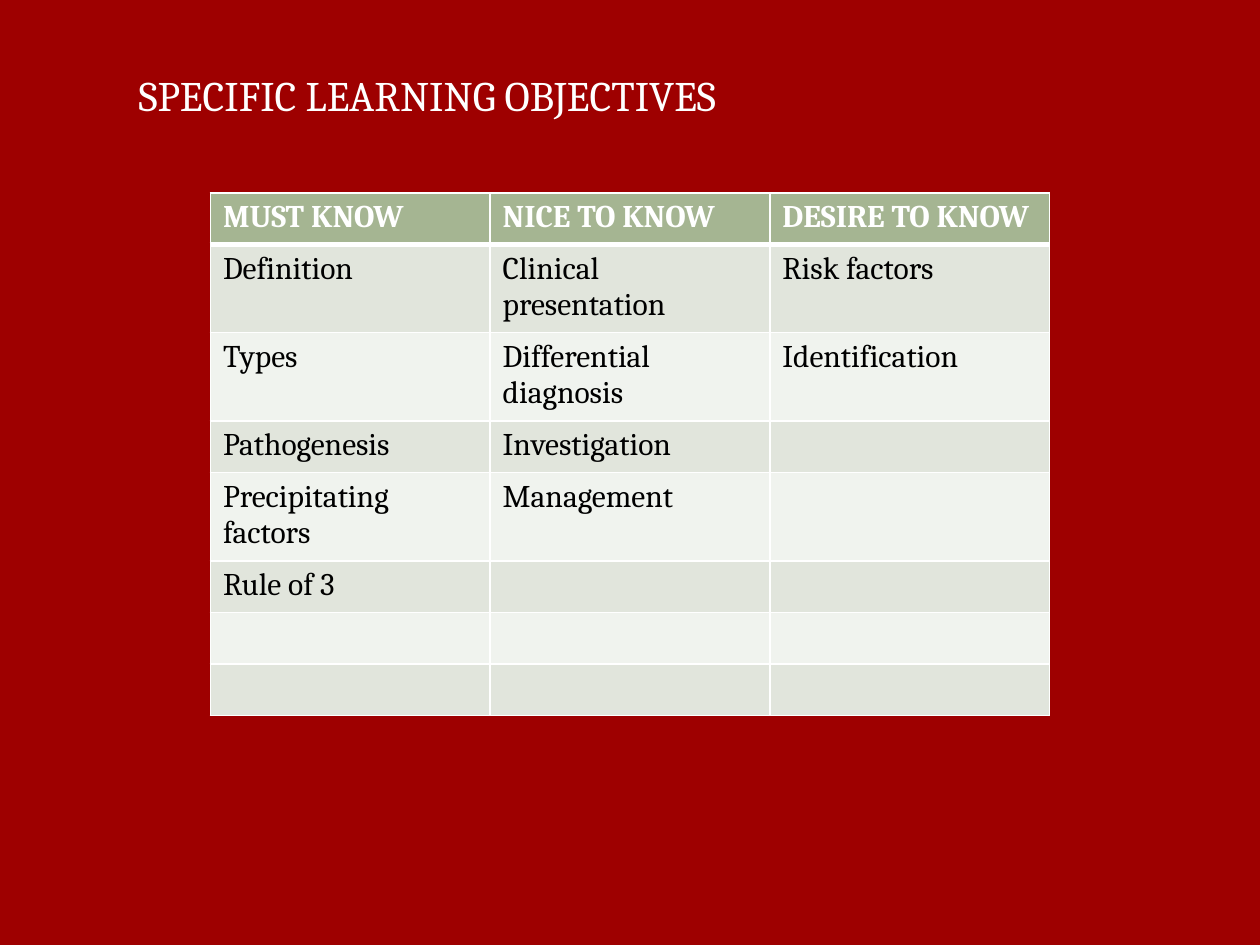
"""Build the specific learning objectives slide."""
import dataclasses
import itertools

import lxml.etree
import pptx
import pptx.dml.color
import pptx.enum.text
import pptx.oxml.ns
import pptx.util

Inches = pptx.util.Inches


@dataclasses.dataclass(frozen=True)
class Theme:
    font: str = "Cambria"
    title_size: int = 24
    cell_size: int = 18
    background: str = "9E0000"
    light: str = "FFFFFF"
    dark: str = "000000"
    header: str = "A5B592"
    bands: tuple = ("E1E5DC", "F0F3EE")
    rule: int = 1
    header_rule: int = 3


THEME = Theme()
OBJECTIVES = {
    "MUST KNOW": ["Definition", "Types", "Pathogenesis", "Precipitating factors", "Rule of 3"],
    "NICE TO KNOW": ["Clinical presentation", "Differential diagnosis", "Investigation", "Management"],
    "DESIRE TO KNOW": ["Risk factors", "Identification"],
}
ROW_COUNT = 8
COLUMN_WIDTH = 2.22
ROW_HEIGHT = 0.41


def paint(fill, color):
    fill.solid()
    fill.fore_color.rgb = pptx.dml.color.RGBColor.from_string(color)


def write(frame, text, size, color, bold=False):
    run = frame.paragraphs[0].add_run()
    run.text = text
    formats = {"name": THEME.font, "size": pptx.util.Pt(size), "bold": bold}
    for attribute, value in formats.items():
        setattr(run.font, attribute, value)
    run.font.color.rgb = pptx.dml.color.RGBColor.from_string(color)


def add_borders(cell, widths):
    qn = pptx.oxml.ns.qn
    properties = cell._tc.get_or_add_tcPr()
    for side, width in widths.items():
        border = lxml.etree.SubElement(properties, qn(f"a:ln{side}"), w=str(pptx.util.Pt(width)))
        solid = lxml.etree.SubElement(border, qn("a:solidFill"))
        lxml.etree.SubElement(solid, qn("a:srgbClr"), val=THEME.light)


def add_heading(slide, text):
    heading = slide.shapes.title
    places = {"left": 1, "top": 0.5, "width": 7, "height": 0.5}
    for attribute, value in places.items():
        setattr(heading, attribute, Inches(value))
    frame = heading.text_frame
    formats = {
        "word_wrap": True,
        "auto_size": pptx.enum.text.MSO_AUTO_SIZE.SHAPE_TO_FIT_TEXT,
        "vertical_anchor": pptx.enum.text.MSO_ANCHOR.TOP,
    }
    for attribute, value in formats.items():
        setattr(frame, attribute, value)
    frame.paragraphs[0].alignment = pptx.enum.text.PP_ALIGN.LEFT
    write(frame, text, THEME.title_size, THEME.light)


def fill_cell(cell, row, text):
    is_header = row == 0
    add_borders(cell, {
        "L": THEME.rule,
        "R": THEME.rule,
        "T": THEME.header_rule if row == 1 else THEME.rule,
        "B": THEME.header_rule if is_header else THEME.rule,
    })
    paint(cell.fill, THEME.header if is_header else THEME.bands[(row - 1) % 2])
    if text:
        color = THEME.light if is_header else THEME.dark
        write(cell.text_frame, text, THEME.cell_size, color, is_header)


def add_objectives(slide, objectives):
    column_count = len(objectives)
    table = slide.shapes.add_table(
        ROW_COUNT, column_count, Inches(1.67), Inches(1.53),
        Inches(COLUMN_WIDTH * column_count), Inches(ROW_HEIGHT * ROW_COUNT),
    ).table
    for column, (level, topics) in enumerate(objectives.items()):
        entries = itertools.chain([level], topics, itertools.repeat(""))
        for row, text in enumerate(itertools.islice(entries, ROW_COUNT)):
            fill_cell(table.cell(row, column), row, text)


def main():
    presentation = pptx.Presentation()
    presentation.slide_width = Inches(10)
    presentation.slide_height = Inches(7.5)
    slide = presentation.slides.add_slide(presentation.slide_layouts.get_by_name("Title Only"))
    paint(slide.background.fill, THEME.background)
    add_heading(slide, "SPECIFIC LEARNING OBJECTIVES")
    add_objectives(slide, OBJECTIVES)
    presentation.save("out.pptx")


if __name__ == "__main__":
    main()
